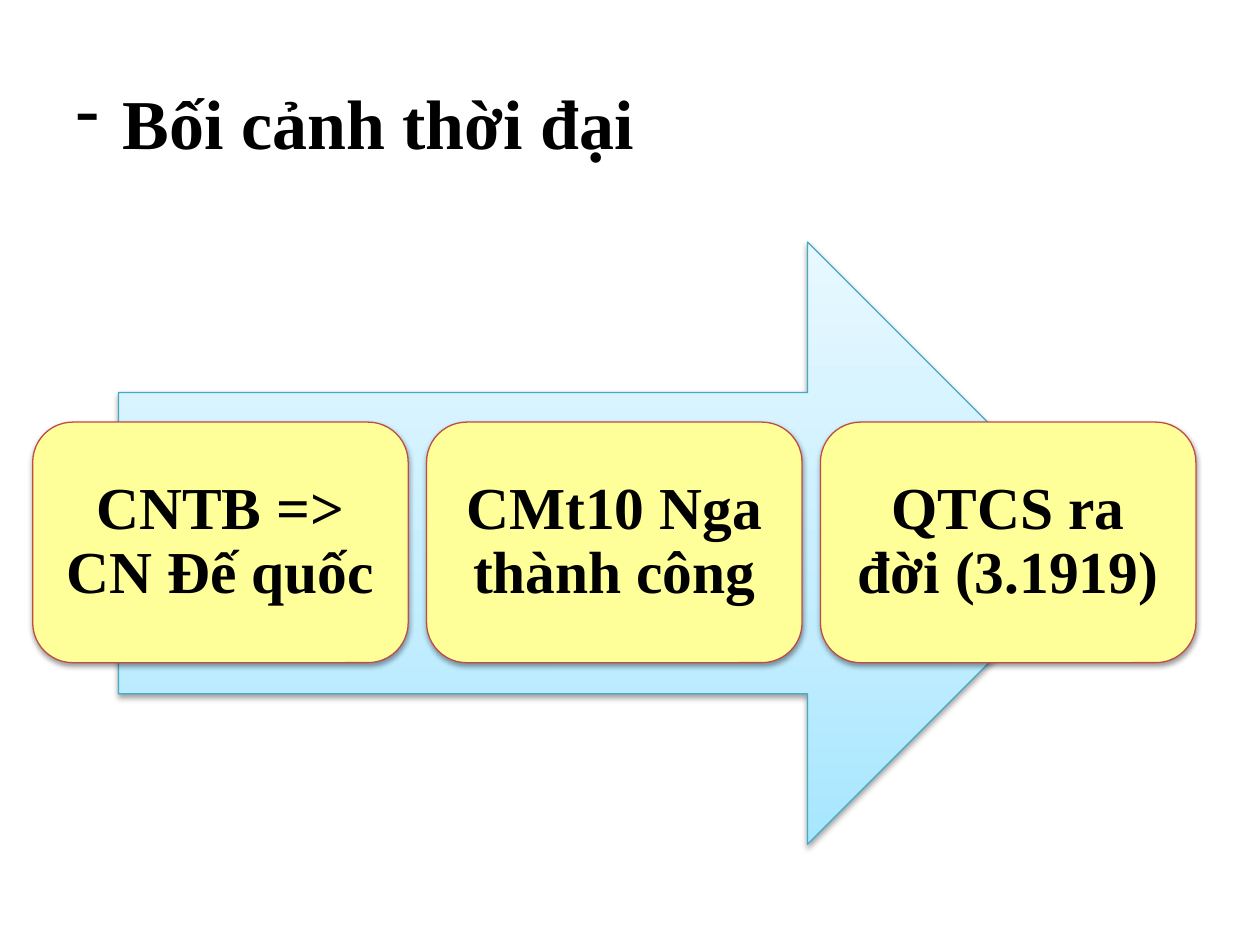
from copy import deepcopy

from pptx import Presentation
from pptx.dml.color import RGBColor
from pptx.enum.shapes import MSO_SHAPE
from pptx.enum.text import MSO_ANCHOR, PP_ALIGN
from pptx.oxml import parse_xml
from pptx.oxml.ns import nsdecls, qn
from pptx.util import Cm, Pt

BLACK = RGBColor(0x00, 0x00, 0x00)
YELLOW = RGBColor(0xFF, 0xFF, 0x99)
RED = RGBColor(0xBF, 0x4C, 0x48)
TEAL = RGBColor(0x46, 0xAA, 0xC5)
BLUES = [
    (0, RGBColor(0xA7, 0xE6, 0xFF)),
    (0.35, RGBColor(0xC1, 0xED, 0xFF)),
    (1, RGBColor(0xE7, 0xF8, 0xFF)),
]
SHADOW = (
    f'<a:effectLst {nsdecls("a")}><a:outerShdw blurRad="40000" dist="20000" '
    'dir="5400000" rotWithShape="0"><a:srgbClr val="000000">'
    '<a:alpha val="38000"/></a:srgbClr></a:outerShdw></a:effectLst>'
)
STEPS = ["CNTB => CN Đế quốc", "CMt10 Nga thành công", "QTCS ra đời (3.1919)"]


def apply(target, values):
    for name, value in values.items():
        setattr(target, name, value)


class Page:
    font = {"name": "Times New Roman", "bold": True}
    frame = {
        "word_wrap": True,
        "vertical_anchor": MSO_ANCHOR.MIDDLE,
        **{f"margin_{side}": Cm(0.36) for side in ("left", "top", "right", "bottom")},
    }
    para = {"alignment": PP_ALIGN.CENTER, "line_spacing": 0.9}

    def __init__(self, deck):
        self.slide = deck.slides.add_slide(deck.slide_layouts[1])
        title = self.slide.shapes.title._element
        title.getparent().remove(title)

    def label(self, para, text, size):
        run = para.add_run()
        run.text = text
        apply(run.font, {**self.font, "size": Pt(size)})
        run.font.color.rgb = BLACK

    def bullet(self, text, left, top, width, height):
        body = self.slide.placeholders[1]
        apply(body, {"left": Cm(left), "top": Cm(top),
                     "width": Cm(width), "height": Cm(height)})
        para = body.text_frame.paragraphs[0]
        self.label(para, text, 40)
        props = para._p.get_or_add_pPr()
        props.set("marL", str(Cm(0.95)))
        props.set("indent", str(-Cm(0.95)))
        for mark in ("<a:buFontTx {}/>", '<a:buChar {} char="-"/>'):
            props.append(parse_xml(mark.format(nsdecls("a"))))

    def shape(self, kind, left, top, width, height, edge):
        item = self.slide.shapes.add_shape(
            kind, Cm(left), Cm(top), Cm(width), Cm(height))
        item.line.color.rgb = edge
        item.line.width = Pt(0.75)
        item._element.spPr.append(parse_xml(SHADOW))
        return item

    def arrow(self, left, top, width, height):
        item = self.shape(MSO_SHAPE.RIGHT_ARROW, left, top, width, height, TEAL)
        item.fill.gradient()
        item.fill.gradient_angle = 90
        stops = item._element.spPr.find(qn("a:gradFill")).find(qn("a:gsLst"))
        stops.append(deepcopy(stops[0]))
        for stop, (place, color) in zip(item.fill.gradient_stops, BLUES):
            stop.position = place
            stop.color.rgb = color

    def box(self, text, left, top, width, height):
        item = self.shape(MSO_SHAPE.ROUNDED_RECTANGLE, left, top, width, height, RED)
        item.fill.solid()
        item.fill.fore_color.rgb = YELLOW
        apply(item.text_frame, self.frame)
        para = item.text_frame.paragraphs[0]
        apply(para, self.para)
        self.label(para, text, 34)


def main():
    deck = Presentation()
    apply(deck, {"slide_width": Cm(25.4), "slide_height": Cm(19.05)})
    page = Page(deck)
    page.bullet("Bối cảnh thời đại", 1.27, 1.47, 22.86, 16.31)
    page.arrow(2.39, 4.88, 19.96, 12.14)
    for index, text in enumerate(STEPS):
        page.box(text, 0.66 + index * 7.94, 8.51, 7.57, 4.85)
    deck.save("out.pptx")


if __name__ == "__main__":
    main()
